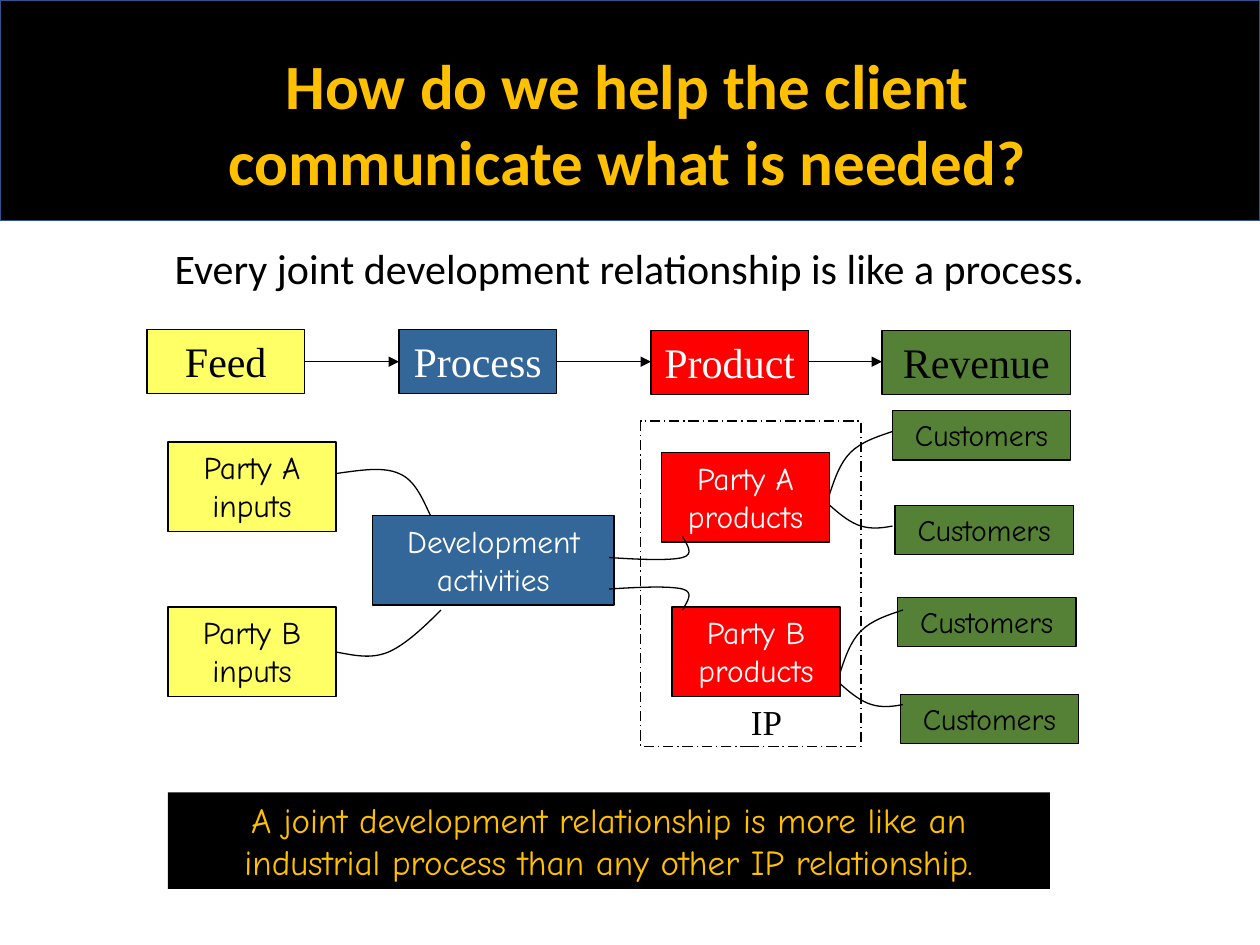
from pptx import Presentation, util as u
from pptx.dml.color import RGBColor
from pptx.enum import shapes, text, dml
from pptx.oxml.ns import qn
from lxml import etree

BLACK, WHITE = RGBColor(0, 0, 0), RGBColor(255, 255, 255)
GOLD, NAVY = RGBColor(0xFF, 0xC0, 0), RGBColor(0x31, 0x53, 0x8F)
YELLOW, BLUE = RGBColor(0xFF, 0xFF, 0x66), RGBColor(0x33, 0x66, 0x99)
RED, GREEN = RGBColor(0xFF, 0, 0), RGBColor(0x54, 0x81, 0x35)
SERIF, HAND, SANS = "Times New Roman", "Comic Neue", "Calibri"

COLS, ROWS = 120, 90
TITLE = "How do we help the client communicate what is needed?"
LEAD = "Every joint development relationship is like a process."
CLOSING = ("A joint development relationship is more like an industrial "
           "process than any other IP relationship.")
STAGES = [
    ("Feed", 14, 31.36, 15, YELLOW, BLACK),
    ("Process", 38, 31.36, 15, BLUE, WHITE),
    ("Product", 62, 31.46, 15, RED, WHITE),
    ("Revenue", 84, 31.46, 17.98, GREEN, BLACK),
]
PARTIES = [
    ("Party A inputs", 16, 42.1, 16, YELLOW, BLACK),
    ("Party B inputs", 16, 57.82, 16, YELLOW, BLACK),
    ("Development activities", 35.5, 49.12, 23, BLUE, WHITE),
    ("Party A products", 63, 43.12, 16, RED, WHITE),
    ("Party B products", 64, 57.82, 16, RED, WHITE),
]
CUSTOMER_ROWS = [39.12, 48.12, 56.88, 66.12]

FEED_A = [(32, 45.1), (34.2, 44.8), (36.5, 44.4), (38, 45.1),
          (39.5, 45.7), (40.2, 47.4), (41, 49.1)]
FEED_B = [(32, 62.1), (33.7, 62.4), (35.3, 62.8), (37, 62.1),
          (38.6, 61.4), (40.3, 59.8), (42, 58.1)]
OUTPUT = [(58, 53.1), (61, 53.3), (63.8, 53.4), (65, 53.1),
          (66.1, 52.8), (65.5, 52), (65, 51.1)]
SALE_UP = [(79, 47.1), (79.5, 45.6), (80, 44.1), (81, 43.1),
           (82, 42.1), (83.5, 41.6), (85, 41.1)]
SALE_DOWN = [(79, 48.1), (80, 49), (81, 49.8), (82, 50.1),
             (83, 50.4), (84, 50.3), (85, 50.1)]
MIRROR = 109.2

prs = Presentation()
prs.slide_width, prs.slide_height = u.Inches(10), u.Inches(7.5)
s = prs.slides.add_slide(prs.slide_layouts[6])


def cx(col):
    return round(prs.slide_width * col / COLS)


def cy(row):
    return round(prs.slide_height * row / ROWS)


def write(sp, words, size, font, color, bold=False):
    tf = sp.text_frame
    tf.word_wrap = True
    tf.auto_size = text.MSO_AUTO_SIZE.SHAPE_TO_FIT_TEXT
    tf.vertical_anchor = text.MSO_ANCHOR.TOP
    p = tf.paragraphs[0]
    p.alignment = text.PP_ALIGN.CENTER
    r = p.add_run()
    r.text = words
    r.font.size, r.font.name, r.font.bold = u.Pt(size), font, bold
    r.font.color.rgb = color


def label(x, y, w, h, words, **fmt):
    write(s.shapes.add_textbox(cx(x), cy(y), cx(w), cy(h)), words, **fmt)


def outline(sp, color=BLACK, width=0.75):
    sp.line.color.rgb, sp.line.width = color, u.Pt(width)


def box(x, y, w, h, fill=None, line=BLACK, width=0.75):
    sp = s.shapes.add_shape(shapes.MSO_SHAPE.RECTANGLE, cx(x), cy(y), cx(w), cy(h))
    sp.shadow.inherit = False
    if fill is None:
        sp.fill.background()
    else:
        sp.fill.solid()
        sp.fill.fore_color.rgb = fill
    if line is None:
        sp.line.fill.background()
    else:
        outline(sp, line, width)
    return sp


def arrow(x1, x2, y):
    c = s.shapes.add_connector(shapes.MSO_CONNECTOR.STRAIGHT, cx(x1), cy(y), cx(x2), cy(y))
    outline(c)
    etree.SubElement(c.line._get_or_add_ln(), qn("a:tailEnd"), type="triangle")
    etree.SubElement(c._element.spPr, qn("a:effectLst"))


def curve(pts, dx=0, dy=0):
    pts = [(cx(x + dx), cy(y + dy)) for x, y in pts]
    fb = s.shapes.build_freeform(*pts[0])
    fb.add_line_segments(pts[1:], close=False)
    sp = fb.convert_to_shape()
    sp.shadow.inherit = False
    sp.fill.background()
    outline(sp)
    outline_path = sp._element.find(".//" + qn("a:path"))
    steps = outline_path.findall(qn("a:lnTo"))
    for i in range(0, len(steps), 3):
        bend = etree.SubElement(outline_path, qn("a:cubicBezTo"))
        for step in steps[i:i + 3]:
            bend.append(step[0])
            outline_path.remove(step)


box(0, 0, COLS, 21, BLACK, NAVY, 1)
label(10, 3.86, 99.5, 15.7, TITLE, size=36, font=SANS, color=GOLD, bold=True)
label(11.3, 22.5, 97.3, 6, LEAD, size=24, font=SANS, color=BLACK)

for words, x, y, w, fill, ink in STAGES:
    write(box(x, y, w, 6.1, fill), words, 24, SERIF, ink)
for left, right in zip(STAGES, STAGES[1:]):
    arrow(left[1] + left[3], right[1], 34.45)

for words, x, y, w, fill, ink in PARTIES:
    write(box(x, y, w, 8.5, fill), words, 18, HAND, ink)
for i, y in enumerate(CUSTOMER_ROWS):
    write(box(85 + 0.25 * i, y, 16.98, 4.7, GREEN), "Customers", 17, HAND, BLACK)

box(61, 40.1, 21, 31).line.dash_style = dml.MSO_LINE.LONG_DASH_DOT
label(66, 66.1, 14, 5.2, "IP", size=20, font=SERIF, color=BLACK)
write(box(16, 75.46, 84, 9.2, BLACK, None), CLOSING, 20, HAND, GOLD)

for pts in (FEED_A, FEED_B, OUTPUT, [(x, MIRROR - y) for x, y in OUTPUT]):
    curve(pts)
for dx, dy in ((0, 0), (1, 17)):
    curve(SALE_UP, dx, dy)
    curve(SALE_DOWN, dx, dy)

prs.save("out.pptx")
